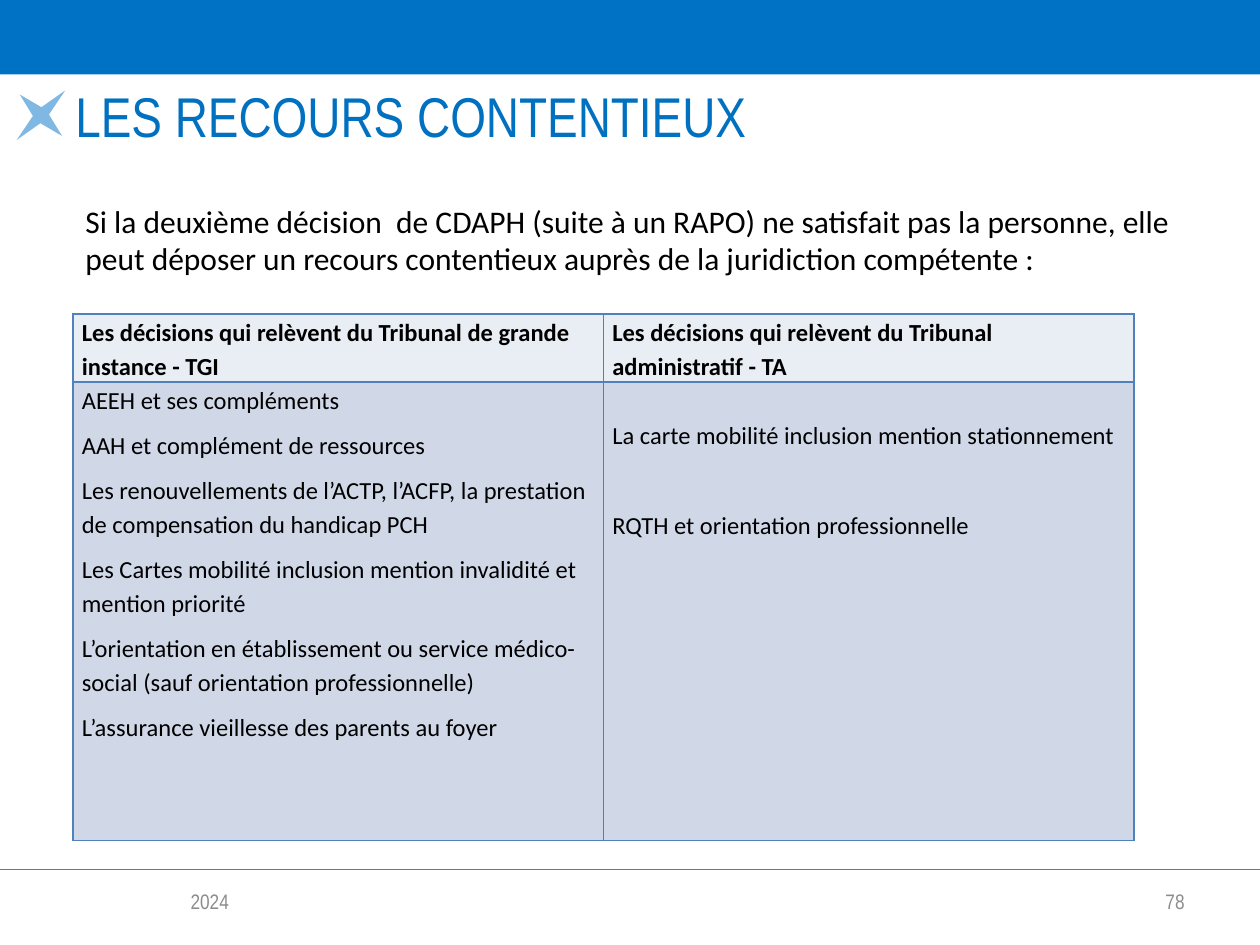
from lxml import etree
from pptx import Presentation
from pptx.dml.color import RGBColor
from pptx.enum.shapes import MSO_CONNECTOR, MSO_SHAPE
from pptx.enum.text import MSO_ANCHOR, PP_ALIGN
from pptx.oxml.ns import qn
from pptx.util import Inches, Pt

RECT, STAR = MSO_SHAPE.RECTANGLE, MSO_SHAPE.STAR_4_POINT
LINE = MSO_CONNECTOR.STRAIGHT
TOP, MIDDLE = MSO_ANCHOR.TOP, MSO_ANCHOR.MIDDLE
LEFT, CENTER, RIGHT = PP_ALIGN.LEFT, PP_ALIGN.CENTER, PP_ALIGN.RIGHT

BLUE = RGBColor(0x00, 0x72, 0xC6)
TITLE = RGBColor(0x00, 0x70, 0xC0)
RULE = RGBColor(0x4B, 0x7E, 0xBC)
EDGE = RGBColor(0x4F, 0x81, 0xBD)
HEAD = RGBColor(0xE9, 0xED, 0xF4)
BODY = RGBColor(0xD0, 0xD8, 0xE8)
GRAY = RGBColor(0x8C, 0x8C, 0x8C)
BLACK = RGBColor(0, 0, 0)
NARROW, SANS = "Arial Narrow", "Calibri"

INTRO = [
    "Si la deuxième décision  de CDAPH (suite à un RAPO) ne satisfait pas la personne, elle",
    "peut déposer un recours contentieux auprès de la juridiction compétente :",
]
HEADS = [
    "Les décisions qui relèvent du Tribunal de grande instance - TGI",
    "Les décisions qui relèvent du Tribunal administratif - TA",
]
CIVIL = [
    "AEEH et ses compléments",
    "AAH et complément de ressources",
    "Les renouvellements de l’ACTP, l’ACFP, la prestation de compensation du handicap PCH",
    "Les Cartes mobilité inclusion mention invalidité et mention priorité",
    "L’orientation en établissement ou service médico-social (sauf orientation professionnelle)",
    "L’assurance vieillesse des parents au foyer",
]
ADMIN = [
    "La carte mobilité inclusion mention stationnement",
    "RQTH et orientation professionnelle",
]


def set_text(frame, lines, size, face, color, bold=False, align=LEFT):
    frame.text = "\n".join(lines)
    for para in frame.paragraphs:
        para.alignment = align
        for run in para.runs:
            font = run.font
            font.size, font.name, font.bold = Pt(size), face, bold
            font.color.rgb = color


def add_text(slide, area, lines, size, face, color, align=LEFT, anchor=TOP):
    box = slide.shapes.add_textbox(*map(Inches, area))
    frame = box.text_frame
    frame.word_wrap = True
    frame.vertical_anchor = anchor
    set_text(frame, lines, size, face, color, align=align)


def add_block(slide, kind, area, turn=0):
    shape = slide.shapes.add_shape(kind, *map(Inches, area))
    shape.shadow.inherit = False
    shape.fill.solid()
    shape.fill.fore_color.rgb = BLUE
    shape.line.fill.background()
    shape.rotation = turn
    return shape


def fade(shape, percent):
    color = shape.fill._xPr.find(".//" + qn("a:srgbClr"))
    etree.SubElement(color, qn("a:alpha"), val=str(percent * 1000))


def add_rule(slide, top):
    rule = slide.shapes.add_connector(LINE, 0, Inches(top), Inches(10), Inches(top))
    rule.line.color.rgb = RULE
    rule.line.width = Pt(0.75)
    etree.SubElement(rule._element.spPr, qn("a:effectLst"))


def add_edges(cell):
    props = cell._tc.get_or_add_tcPr()
    for spot, side in enumerate(("a:lnL", "a:lnR", "a:lnT", "a:lnB")):
        edge = etree.Element(qn(side), w=str(Pt(1)))
        fill = etree.SubElement(edge, qn("a:solidFill"))
        etree.SubElement(fill, qn("a:srgbClr"), val=str(EDGE))
        props.insert(spot, edge)


def fill_cell(cell, lines, fill, bold=False, top=0, gap=6):
    cell.fill.solid()
    cell.fill.fore_color.rgb = fill
    cell.margin_left = cell.margin_right = Inches(0.07)
    cell.margin_top, cell.margin_bottom = Inches(top), 0
    set_text(cell.text_frame, lines, 14, SANS, BLACK, bold)
    for para in cell.text_frame.paragraphs:
        para.line_spacing = 1.15
        para.space_after = Pt(gap)
    add_edges(cell)


def add_courts(slide):
    area = map(Inches, (0.58, 2.49, 8.42, 4.18))
    table = slide.shapes.add_table(2, 2, *area).table
    table.first_row = table.horz_banding = False
    for row, height in zip(table.rows, (0.54, 3.64)):
        row.height = Inches(height)
    for col, head in enumerate(HEADS):
        table.columns[col].width = Inches(4.21)
        fill_cell(table.cell(0, col), [head], HEAD, bold=True)
    fill_cell(table.cell(1, 0), CIVIL, BODY)
    fill_cell(table.cell(1, 1), ADMIN, BODY, top=0.28, gap=31.5)


def main():
    deck = Presentation()
    deck.slide_width, deck.slide_height = Inches(10), Inches(7.5)
    slide = deck.slides.add_slide(deck.slide_layouts[6])
    add_block(slide, RECT, (0, 0, 10, 0.59))
    fade(add_block(slide, STAR, (0.09, 0.64, 0.47, 0.55), 44.4), 50)
    add_rule(slide, 6.9)
    add_text(slide, (0.5, 0.6, 9, 0.87), ["LES RECOURS CONTENTIEUX"], 32, NARROW, TITLE)
    add_courts(slide)
    add_text(slide, (0.58, 1.55, 8.97, 0.71), INTRO, 18, SANS, BLACK)
    for left, note, align in ((0.5, "2024", CENTER), (7.17, "78", RIGHT)):
        add_text(slide, (left, 6.95, 2.33, 0.4), [note], 12, NARROW, GRAY, align, MIDDLE)
    deck.save("out.pptx")


if __name__ == "__main__":
    main()
